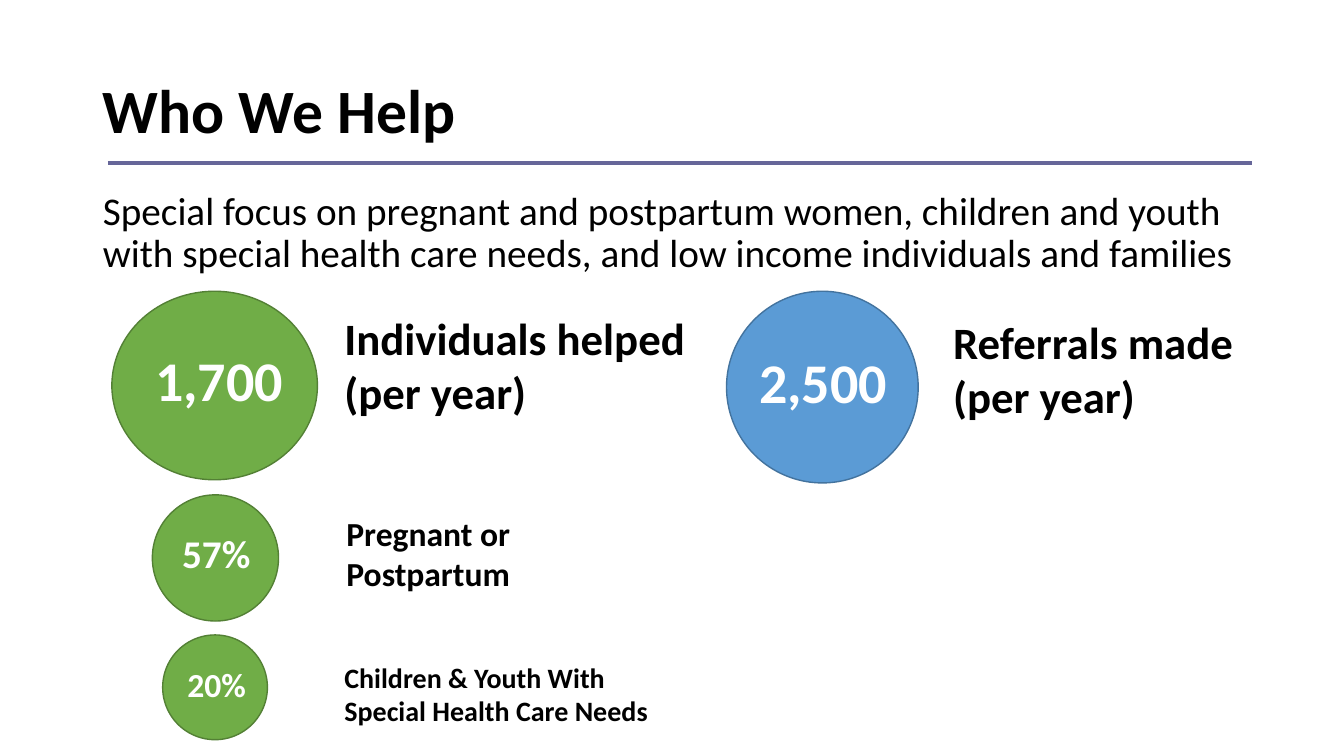
from lxml import etree
from pptx import Presentation
from pptx.dml.color import RGBColor
from pptx.enum.shapes import MSO_CONNECTOR, MSO_SHAPE
from pptx.enum.text import MSO_ANCHOR, MSO_AUTO_SIZE, PP_ALIGN
from pptx.oxml.ns import qn
from pptx.util import Cm, Pt

STRAIGHT = MSO_CONNECTOR.STRAIGHT
OVAL = MSO_SHAPE.OVAL
TOP, MIDDLE = MSO_ANCHOR.TOP, MSO_ANCHOR.MIDDLE
NO_FIT = MSO_AUTO_SIZE.NONE
LEFT, CENTER = PP_ALIGN.LEFT, PP_ALIGN.CENTER

BLACK, WHITE, RULE = "000000", "FFFFFF", "666699"
GREEN, BLUE = ("70AD47", "538035"), ("5B9BD5", "43739E")


def color(hex_code):
    return RGBColor.from_string(hex_code)


class SlideBuilder:
    font = "Calibri"

    def __init__(self, slide):
        self.slide = slide

    def fill_frame(self, frame, lines, size, ink=BLACK, bold=True, align=LEFT, spacing=None):
        frame.word_wrap = True
        frame.auto_size = NO_FIT
        for index, line in enumerate(lines):
            paragraph = frame.paragraphs[0] if index == 0 else frame.add_paragraph()
            paragraph.alignment = align
            paragraph.space_before = Pt(0)
            if spacing:
                paragraph.line_spacing = spacing
            run = paragraph.add_run()
            run.text = line
            run.font.name = self.font
            run.font.size = Pt(size)
            run.font.bold = bold
            run.font.color.rgb = color(ink)

    def placeholder(self, holder, box, text, size, bold, anchor):
        holder.left, holder.top, holder.width, holder.height = map(Cm, box)
        holder.text_frame.vertical_anchor = anchor
        self.fill_frame(holder.text_frame, [text], size, bold=bold, spacing=0.9)

    def title(self, box, text):
        self.placeholder(self.slide.shapes.title, box, text, 44, True, MIDDLE)

    def body(self, box, text):
        holder = self.slide.placeholders[1]
        properties = holder.text_frame.paragraphs[0]._p.get_or_add_pPr()
        properties.set("marL", "0")
        properties.set("indent", "0")
        etree.SubElement(properties, qn("a:buNone"))
        self.placeholder(holder, box, text, 28, False, TOP)

    def rule(self, left, right, y):
        line = self.slide.shapes.add_connector(STRAIGHT, Cm(left), Cm(y), Cm(right), Cm(y))
        line.line.color.rgb = color(RULE)
        line.line.width = Pt(3)
        etree.SubElement(line._element.spPr, qn("a:effectLst"))

    def circle(self, box, colors):
        fill, outline = colors
        oval = self.slide.shapes.add_shape(OVAL, *map(Cm, box))
        oval.shadow.inherit = False
        oval.fill.solid()
        oval.fill.fore_color.rgb = color(fill)
        oval.line.color.rgb = color(outline)
        oval.line.width = Pt(1)

    def text(self, box, lines, size, ink=BLACK, align=LEFT):
        frame = self.slide.shapes.add_textbox(*map(Cm, box)).text_frame
        self.fill_frame(frame, lines, size, ink, align=align)


def main():
    deck = Presentation()
    deck.slide_width, deck.slide_height = Cm(33.87), Cm(19.05)
    builder = SlideBuilder(deck.slides.add_slide(deck.slide_layouts[1]))

    builder.title((2.34, 1.02, 29.21, 3.68), "Who We Help")
    builder.body(
        (2.34, 4.7, 30.35, 13.34),
        "Special focus on pregnant and postpartum women, children and youth "
        "with special health care needs, and low income individuals and families",
    )
    builder.rule(2.72, 31.55, 4.11)

    statistics = [
        ((2.82, 7.34, 5.18, 4.75), GREEN, "1,700", (3.66, 8.59, 4.32, 1.96), 40, LEFT,
         ["Individuals helped (per year)"], (8.43, 7.7, 9.45, 3.84), 32),
        ((18.31, 7.34, 4.83, 4.83), BLUE, "2,500", (18.62, 8.64, 4.24, 1.96), 40, CENTER,
         ["Referrals made (per year)"], (23.77, 7.8, 7.75, 3), 32),
        ((3.84, 12.47, 3.18, 3.18), GREEN, "57%", (3.86, 13.21, 3.18, 1.45), 28, CENTER,
         ["Pregnant or", "Postpartum"], (8.48, 12.8, 8, 2.31), 24),
        ((4.1, 16, 2.64, 2.64), GREEN, "20%", (4.47, 16.61, 3.18, 1.27), 24, LEFT,
         ["Children & Youth With Special Health Care Needs"], (8.43, 16.51, 8.51, 1.96), 20),
    ]
    for circle, colors, figure, figure_box, figure_size, align, label, label_box, label_size in statistics:
        builder.circle(circle, colors)
        builder.text(figure_box, [figure], figure_size, WHITE, align)
        builder.text(label_box, label, label_size)

    deck.save("out.pptx")


if __name__ == "__main__":
    main()
